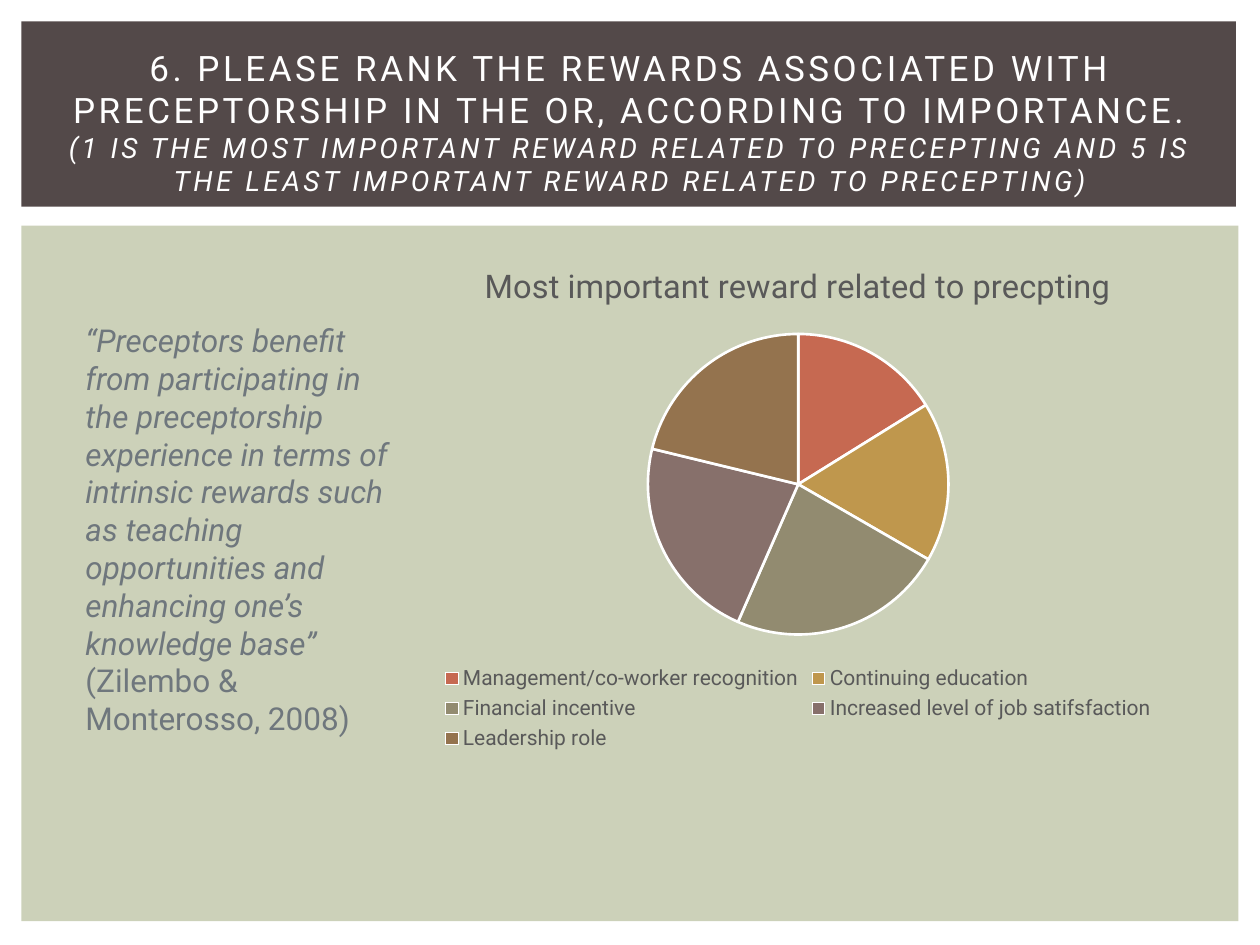
from dataclasses import dataclass

import pptx
import pptx.chart.data
import pptx.dml.color
import pptx.enum.chart
import pptx.enum.shapes
import pptx.enum.text
import pptx.util
from pptx.util import Inches, Pt

FONT = "Roboto"
COLORS = {
    "band": "534949",
    "panel": "CCD1B9",
    "white": "FFFFFF",
    "quote": "6F777D",
    "chart_text": "595959",
}


@dataclass
class Box:
    left: float
    top: float
    width: float
    height: float

    def inches(self) -> tuple:
        return tuple(Inches(v) for v in (self.left, self.top, self.width, self.height))


@dataclass
class Reward:
    name: str
    value: int
    color: str


@dataclass
class TextRun:
    text: str
    size: float
    italic: bool = False
    break_before: bool = False


REWARDS = [
    Reward("Management/co-worker recognition", 16, "C66951"),
    Reward("Continuing education", 17, "BF974D"),
    Reward("Financial incentive", 23, "928B70"),
    Reward("Increased level of job satifsfaction", 22, "87706B"),
    Reward("Leadership role", 21, "94734E"),
]
TITLE = [
    TextRun("6. PLEASE RANK THE REWARDS ASSOCIATED WITH PRECEPTORSHIP IN THE OR, "
            "ACCORDING TO IMPORTANCE.", 20),
    TextRun("(1 IS THE MOST IMPORTANT REWARD RELATED TO PRECEPTING AND 5 IS "
            "THE LEAST IMPORTANT REWARD RELATED TO PRECEPTING)", 16, True, True),
]
QUOTE = [
    TextRun("“Preceptors benefit from participating in the preceptorship experience "
            "in terms of intrinsic rewards such as teaching opportunities and "
            "enhancing one’s knowledge base” ", 18, True),
    TextRun("(Zilembo & Monterosso, 2008)", 18),
]
CHART_TITLE = "Most important reward related to precpting"


def rgb(color: str) -> pptx.dml.color.RGBColor:
    return pptx.dml.color.RGBColor.from_string(color)


def style_font(font, size: float, color: str) -> None:
    font.name = FONT
    font.size = Pt(size)
    font.color.rgb = rgb(color)


def add_panel(slide, box: Box, color: str) -> None:
    sp = slide.shapes.add_shape(pptx.enum.shapes.MSO_SHAPE.RECTANGLE, *box.inches())
    sp.shadow.inherit = False
    sp.fill.solid()
    sp.fill.fore_color.rgb = rgb(color)
    sp.line.fill.background()


def add_text(slide, box: Box, runs: list[TextRun], color: str, spacing: float = 0):
    """Add one paragraph of runs; spacing is the letter spacing in points."""
    tf = slide.shapes.add_textbox(*box.inches()).text_frame
    tf.word_wrap = True
    p = tf.paragraphs[0]
    for run in runs:
        if run.break_before:
            p.add_line_break()
        r = p.add_run()
        r.text = run.text
        style_font(r.font, run.size, color)
        r.font.italic = run.italic
        if spacing:
            r._r.get_or_add_rPr().set("spc", str(int(spacing * 100)))
    return tf


def add_pie(slide, box: Box, rewards: list[Reward]) -> None:
    data = pptx.chart.data.CategoryChartData()
    data.categories = [reward.name for reward in rewards]
    data.add_series(CHART_TITLE, [reward.value for reward in rewards])
    chart = slide.shapes.add_chart(
        pptx.enum.chart.XL_CHART_TYPE.PIE, *box.inches(), data).chart
    style_font(chart.font, 10, "000000")

    # Chart title and legend
    chart.has_title = True
    p = chart.chart_title.text_frame.paragraphs[0]
    p.text = CHART_TITLE
    style_font(p.font, 18.6, COLORS["chart_text"])
    p.font.bold = False
    chart.has_legend = True
    chart.legend.position = pptx.enum.chart.XL_LEGEND_POSITION.BOTTOM
    chart.legend.include_in_layout = False
    style_font(chart.legend.font, 12, COLORS["chart_text"])

    # Slices
    plot = chart.plots[0]
    plot.vary_by_categories = True
    for i, reward in enumerate(rewards):
        slice_format = plot.series[0].points[i].format
        slice_format.fill.solid()
        slice_format.fill.fore_color.rgb = rgb(reward.color)
        slice_format.line.color.rgb = rgb(COLORS["white"])
        slice_format.line.width = Pt(1.5)


def main() -> None:
    prs = pptx.Presentation()
    prs.slide_width, prs.slide_height = Inches(10), Inches(7.5)
    slide = prs.slides.add_slide(prs.slide_layouts[6])

    # Background panels
    add_panel(slide, Box(0.17, 1.79, 9.66, 5.52), COLORS["panel"])
    add_panel(slide, Box(0.17, 0.17, 9.64, 1.47), COLORS["band"])

    # Heading
    tf = add_text(slide, Box(0.42, 0.39, 9.17, 1.15), TITLE, COLORS["white"], 2)
    tf.vertical_anchor = pptx.enum.text.MSO_ANCHOR.MIDDLE
    tf.paragraphs[0].alignment = pptx.enum.text.PP_ALIGN.CENTER

    # Chart and quotation
    add_pie(slide, Box(2.17, 1.92, 8.33, 4.08), REWARDS)
    tf = add_text(slide, Box(0.58, 2.5, 2.75, 3.43), QUOTE, COLORS["quote"])
    tf.auto_size = pptx.enum.text.MSO_AUTO_SIZE.SHAPE_TO_FIT_TEXT

    prs.save("out.pptx")


if __name__ == "__main__":
    main()
